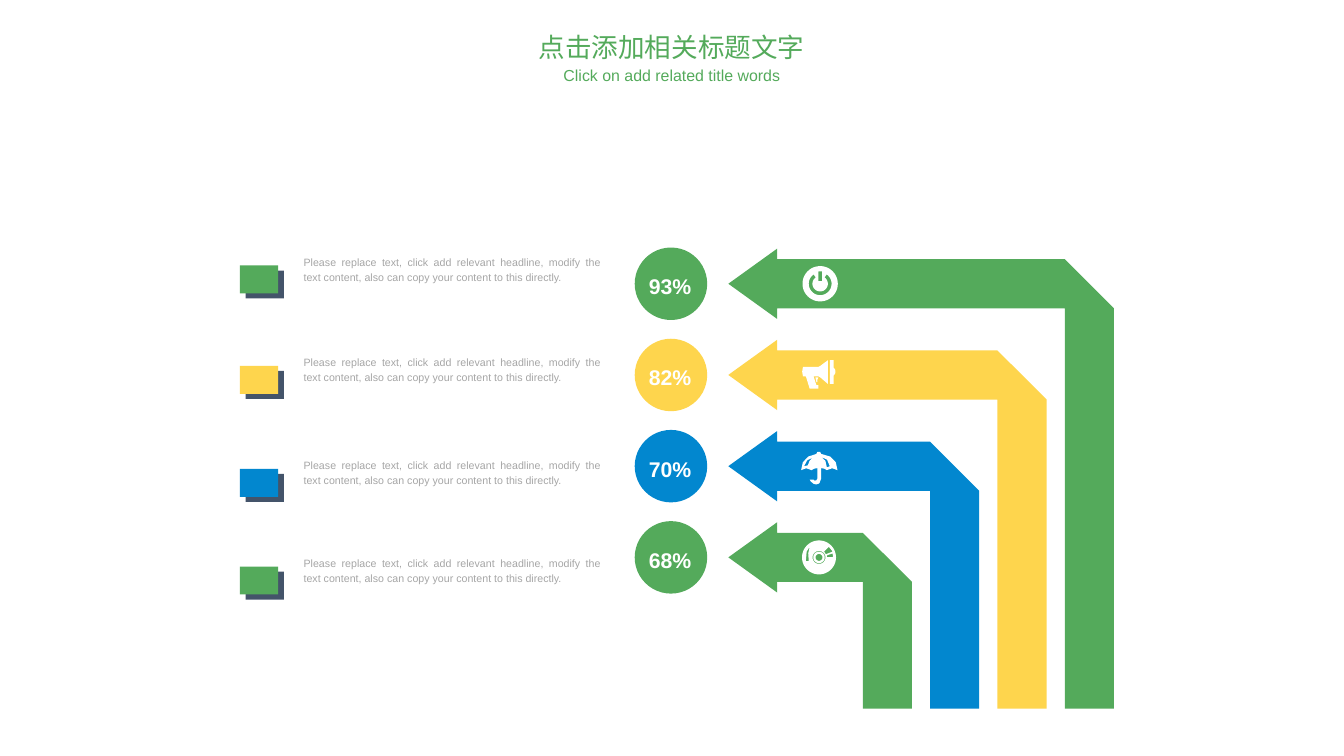
from dataclasses import dataclass
from math import cos, radians, sin

from lxml import etree
from pptx import Presentation
from pptx.dml.color import RGBColor
from pptx.enum.shapes import MSO_SHAPE
from pptx.enum.text import MSO_ANCHOR, MSO_AUTO_SIZE, PP_ALIGN
from pptx.oxml.ns import qn
from pptx.util import Pt

RECT, OVAL = MSO_SHAPE.RECTANGLE, MSO_SHAPE.OVAL
CENTER, JUSTIFY = PP_ALIGN.CENTER, PP_ALIGN.JUSTIFY
TOP, MIDDLE = MSO_ANCHOR.TOP, MSO_ANCHOR.MIDDLE
NO_FIT = MSO_AUTO_SIZE.NONE
TITLE_ONLY = 5


@dataclass(frozen=True)
class Theme:
    green: str = "54AA5B"
    yellow: str = "FED54D"
    blue: str = "0287CF"
    navy: str = "44546A"
    gray: str = "A6A6A6"
    white: str = "FFFFFF"
    latin: str = "Arial"
    cjk: str = "Noto Sans CJK SC"
    title: float = 20
    subtitle: float = 12
    percent: float = 16
    caption: float = 8


def arc(r, start=0, end=360, cx=0, cy=0, steps=48):
    """Points along a circular arc, clockwise from the right, in degrees."""
    angles = [radians(start + (end - start) * i / steps) for i in range(steps + 1)]
    return [(cx + r * cos(a), cy + r * sin(a)) for a in angles]


# Icon outlines, in points from the icon's centre; inner outlines cut holes.
POWER = [
    arc(13.3),
    [(-1.4, -9.4), (1.4, -9.4), (1.4, -2), (-1.4, -2)],
    arc(8.6, -55, 235) + arc(5.8, 235, -55),
]
MEGAPHONE = [
    [(-13, -6.1), (-1.4, -6.1), (0, -6.8), (5.8, -11.1), (5.8, 6.8), (0, 1.8),
     (-1.4, 1.1), (-5, 1.1), (-2.9, 7.6), (-1.4, 7.6), (-1.4, 10.4),
     (-7.9, 10.4), (-10.8, 1.1), (-13, 1.1), (-13.6, -2.5)],
    [(7.2, -11.1), (10.1, -11.1), (10.1, -5.4), (11.2, -4.2), (11.5, -2.5),
     (11.2, -0.8), (10.1, 0.4), (10.1, 6.8), (7.2, 6.8)],
    [(-1.4, 1.8), (-3.6, 1.8), (-2.9, 5.4), (-2.2, 5.4), (-2.2, 4)],
]
UMBRELLA = [
    [(-14.4, 3), (-13.1, -2.9), (-9.1, -7.2), (-2.9, -9.2), (-2.2, -10.7),
     (0, -10.7), (0.7, -9.2), (7.6, -7.2), (11.7, -2.9), (13, 3), (9, 1.6),
     (5, 3), (3, 1.9), (0.7, 1.5), (0.7, 9.5), (-0.7, 13), (-2.9, 13.8),
     (-5, 13.3), (-7.2, 11.5), (-7.9, 10.2), (-5, 10.2), (-4.3, 11),
     (-2.9, 10.6), (-2.2, 9.5), (-2.2, 1.5), (-4.5, 1.9), (-6.5, 3),
     (-10.5, 1.6)],
    [(5, 0.9), (7.2, 0.1), (5.2, -4.8), (0.7, -7), (3.9, -4)],
    [(-12.2, 0.1), (-9.4, -0.6), (-8, -4), (-5.8, -6.3), (-9.7, -4.5)],
]
DISC = [
    *(arc(r, cx=-0.9) for r in (12.8, 4.9, 4.3, 2.6)),
    [(-7.9, -8), (-10.2, -4.5), (-10.8, 2.8), (-8.6, 2.8), (-9, -3)],
    [(2.9, -4.4), (4.3, -2.4), (9.4, -4.4), (6.5, -8)],
    [(9.4, -3), (5, -1.5), (5, -0.2), (9.6, -0.2)],
]


class SlideBuilder:
    def __init__(self, slide, theme):
        self.slide, self.theme = slide, theme

    def paint(self, sp, color):
        sp.fill.solid()
        sp.fill.fore_color.rgb = RGBColor.from_string(color)
        sp.line.fill.background()
        sp.shadow.inherit = False

    def shape(self, kind, x, y, w, h, color):
        sp = self.slide.shapes.add_shape(kind, Pt(x), Pt(y), Pt(w), Pt(h))
        self.paint(sp, color)

    def outline(self, contours, color, dx=0, dy=0):
        """Closed polygons joined in one shape, moved by (dx, dy)."""
        placed = [[(Pt(x + dx), Pt(y + dy)) for x, y in c] for c in contours]
        builder = self.slide.shapes.build_freeform(*placed[0][0])
        for i, points in enumerate(placed):
            if i:
                builder.move_to(*points[0])
            builder.add_line_segments(points[1:], close=True)
        self.paint(builder.convert_to_shape(), color)

    def set_text(self, sp, text, size, color, align, bold=False, spacing=1.0,
                 anchor=TOP, wrap=True, font=None):
        tf = sp.text_frame
        frame = {"word_wrap": wrap, "auto_size": NO_FIT, "vertical_anchor": anchor,
                 "margin_left": Pt(7.2), "margin_right": Pt(7.2),
                 "margin_top": Pt(3.6), "margin_bottom": Pt(3.6)}
        p = tf.paragraphs[0]
        r = p.add_run()
        r.text = text
        name = font or self.theme.latin
        formats = (
            (tf, frame),
            (p, {"alignment": align, "line_spacing": spacing,
                 "space_before": Pt(0), "space_after": Pt(0)}),
            (r.font, {"size": Pt(size), "bold": bold, "name": name}),
        )
        for target, values in formats:
            for key, value in values.items():
                setattr(target, key, value)
        r.font.color.rgb = RGBColor.from_string(color)
        etree.SubElement(r._r.get_or_add_rPr(), qn("a:ea"), typeface=name)

    def text(self, x, y, w, h, *args, **kwargs):
        sp = self.slide.shapes.add_textbox(Pt(x), Pt(y), Pt(w), Pt(h))
        self.set_text(sp, *args, **kwargs)

    def title(self, x, y, w, h, *args, **kwargs):
        sp = self.slide.shapes.title
        box = {"left": x, "top": y, "width": w, "height": h}
        for key, value in box.items():
            setattr(sp, key, Pt(value))
        self.set_text(sp, *args, **kwargs)

    def bent_arrow(self, cy, right, bottom, color):
        """Left-pointing arrow whose shaft turns down at a cut corner."""
        tip, neck, half, band = 548.6, 585.4, 18.5, 37
        inner = right - band
        self.outline([[
            (tip, cy), (neck, cy - 26.5), (neck, cy - half), (inner, cy - half),
            (right, cy + half), (right, bottom), (inner, bottom),
            (inner, cy + half), (neck, cy + half), (neck, cy + 26.5),
        ]], color)

    def swatch(self, x, y, color):
        w, h = 28.8, 21.1
        self.shape(RECT, x + 4.3, y + 3.8, w, h, self.theme.navy)
        self.shape(RECT, x, y, w, h, color)


CAPTION = ("Please replace text, click add relevant headline, modify the text "
           "content, also can copy your content to this directly.")


def main():
    t = Theme()
    prs = Presentation()
    prs.slide_width, prs.slide_height = Pt(1012.32), Pt(569.52)
    s = SlideBuilder(prs.slides.add_slide(prs.slide_layouts[TITLE_ONLY]), t)

    s.title(385.2, 20.9, 241.2, 29.5, "点击添加相关标题文字", t.title, t.green,
            CENTER, anchor=MIDDLE, font=t.cjk)
    s.text(414.7, 46.1, 182.9, 29.5, "Click on add related title words",
           t.subtitle, t.green, CENTER)

    rows = [
        ("93%", t.green, POWER, 187.2),
        ("82%", t.yellow, MEGAPHONE, 262.8),
        ("70%", t.blue, UMBRELLA, 340.4),
        ("68%", t.green, DISC, 414),
    ]
    first_center, row_pitch = 213.8, 68.7
    first_right, column_pitch = 839, 50.7
    diameter = 54.6
    for i, (percent, color, icon, caption_top) in enumerate(rows):
        cy = first_center + i * row_pitch
        s.shape(OVAL, 478.1, cy - diameter / 2, diameter, diameter, color)
        s.text(481.7, cy - 15.1, 46.8, 30.2, percent, t.percent, t.white,
               JUSTIFY, bold=True, spacing=1.2, wrap=False)
        s.bent_arrow(cy, first_right - i * column_pitch, 533.8, color)
        s.outline(icon, t.white, 617.8, cy)
        s.swatch(180.7, caption_top + 12.8, color)
        s.text(221.6, caption_top, 238.3, 29.5, CAPTION, t.caption, t.gray,
               JUSTIFY, spacing=1.2)

    prs.save("out.pptx")


if __name__ == "__main__":
    main()
